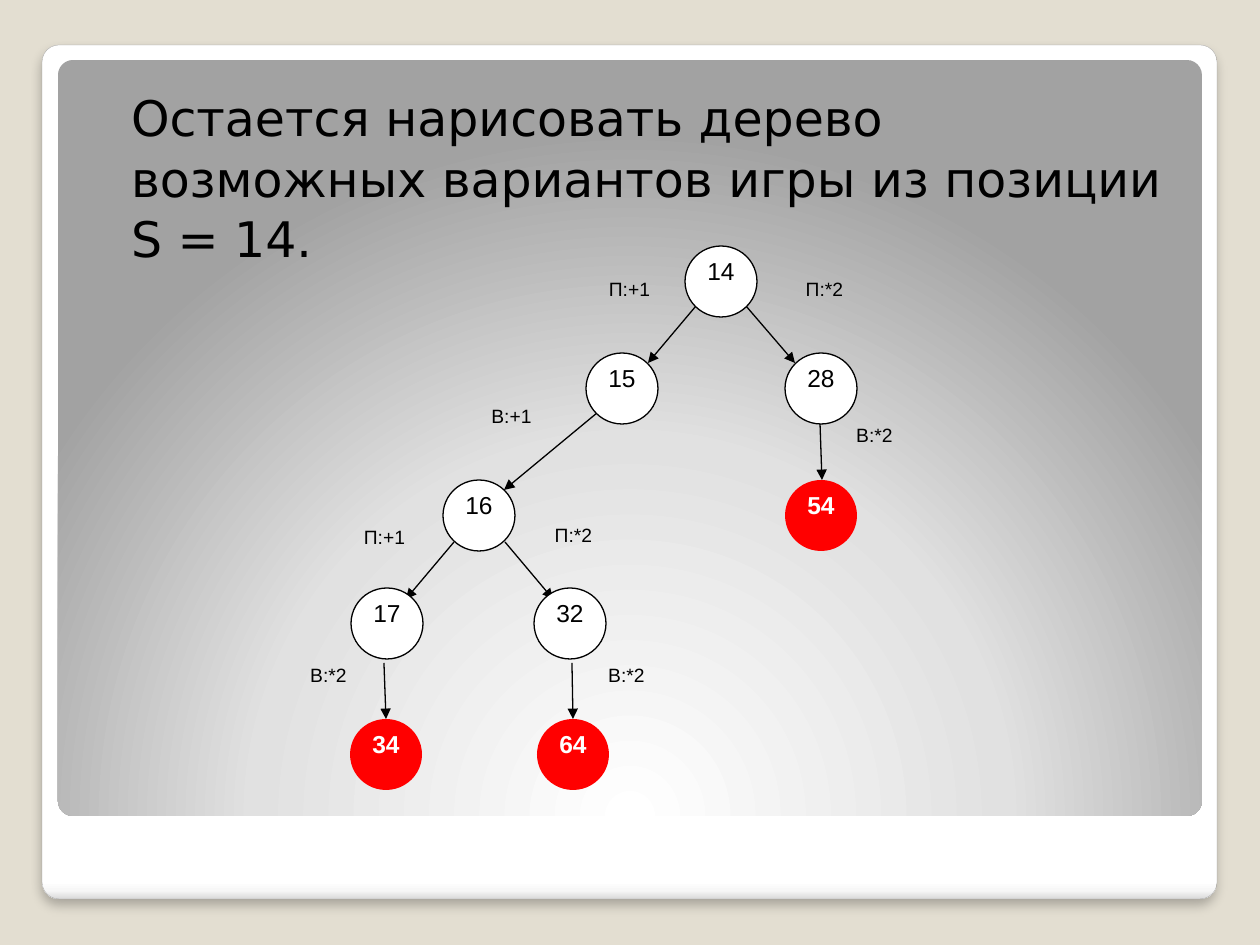
"""Build a slide with the game tree for the starting position S = 14."""
from lxml import etree
from pptx import Presentation
from pptx.dml.color import RGBColor
from pptx.enum.shapes import MSO_CONNECTOR, MSO_SHAPE
from pptx.enum.text import MSO_ANCHOR, PP_ALIGN
from pptx.oxml.ns import qn
from pptx.util import Pt

PX = 914400 / 126
ELLIPSE, ROUNDED = MSO_SHAPE.OVAL, MSO_SHAPE.ROUNDED_RECTANGLE
STRAIGHT = MSO_CONNECTOR.STRAIGHT
TOP, CENTER = MSO_ANCHOR.TOP, PP_ALIGN.CENTER
C = {
    "background": "E3DED1", "frame_line": "A4A4A4", "black": "000000",
    "white": "FFFFFF", "win": "FF0000", "edge_light": "F7F7F7",
    "edge_dark": "DADADA", "panel_mid": "E1E1E1", "panel_dark": "A2A2A2",
}
RGB = {name: RGBColor.from_string(value) for name, value in C.items()}


def add_shape(kind, *box):
    sp = s.shapes.add_shape(kind, *[round(v * PX) for v in box])
    sp.shadow.inherit = False
    sp.fill.background()
    sp.line.fill.background()
    return sp


def set_gradient(sp, stops):
    sp.fill.gradient()
    grad = sp._element.spPr.find(qn("a:gradFill"))
    for child in list(grad):
        grad.remove(child)
    gs_list = etree.SubElement(grad, qn("a:gsLst"))
    for pos, color in stops:
        gs = etree.SubElement(gs_list, qn("a:gs"), pos=str(pos * 1000))
        etree.SubElement(gs, qn("a:srgbClr"), val=C[color])
    return grad


prs = Presentation()
prs.slide_width, prs.slide_height = round(1260 * PX), round(945 * PX)
s = prs.slides.add_slide(prs.slide_layouts[6])
s.background.fill.solid()
s.background.fill.fore_color.rgb = RGB["background"]

frame = add_shape(ROUNDED, 42, 45, 1175, 854)
frame.adjustments[0] = 0.02
grad = set_gradient(frame, [(0, "white"), (98, "white"), (99, "edge_light"), (100, "edge_dark")])
etree.SubElement(grad, qn("a:lin"), ang="5400000", scaled="0")
frame.line.color.rgb = RGB["frame_line"]
frame.line.width = Pt(0.16)
effects = frame._element.spPr.find(qn("a:effectLst"))
shadow = etree.SubElement(effects, qn("a:outerShdw"), blurRad=str(Pt(6)),
                          dist=str(Pt(4)), dir="5400000", algn="t", rotWithShape="0")
shade = etree.SubElement(shadow, qn("a:srgbClr"), val=C["black"])
etree.SubElement(shade, qn("a:alpha"), val="25000")

panel = add_shape(ROUNDED, 58, 60, 1144, 756)
panel.adjustments[0] = 0.02
grad = set_gradient(panel, [(0, "white"), (55, "panel_mid"), (100, "panel_dark")])
radial = etree.SubElement(grad, qn("a:path"), path="circle")
etree.SubElement(radial, qn("a:fillToRect"), l="50000", t="175000", r="50000", b="-75000")

title = s.shapes.add_textbox(*[round(v * PX) for v in (69, 73, 1128, 747)])
tf = title.text_frame
tf.word_wrap = True
tf.margin_left, tf.margin_top = round(62 * PX), round(13 * PX)
tf.margin_right, tf.margin_bottom = round(13 * PX), round(6 * PX)
p = tf.paragraphs[0]
p.text = "Остается нарисовать дерево возможных вариантов игры из позиции S = 14."
p.space_before = Pt(2.5)
p.line_spacing = 1.03
p.font.size, p.font.name = Pt(28), "DejaVu Sans"
p.font.color.rgb = RGB["black"]

moves = [
    (746, 306, 795, 363), (696, 306, 648, 363), (597, 413, 504, 490),
    (820, 423, 822, 480), (505, 542, 553, 599), (454, 542, 406, 599),
    (384, 663, 386, 719), (572, 663, 573, 719),
]
for ends in moves:
    arrow = s.shapes.add_connector(STRAIGHT, *[round(v * PX) for v in ends])
    arrow.line.color.rgb = RGB["black"]
    arrow.line.width = Pt(0.75)
    etree.SubElement(arrow.line._get_or_add_ln(), qn("a:tailEnd"), type="triangle")
    etree.SubElement(arrow._element.spPr, qn("a:effectLst"))

ovals = [
    ("14", 685, 246, "node"), ("15", 586, 353, "node"), ("28", 785, 353, "node"),
    ("16", 443, 480, "node"), ("54", 785, 480, "win"),
    ("17", 351, 588, "node"), ("32", 534, 588, "node"),
    ("34", 350, 719, "win"), ("64", 537, 719, "win"),
    ("П:+1", 564, 267, "move"), ("П:*2", 759, 267, "move"),
    ("В:+1", 446, 394, "move"), ("В:*2", 809, 413, "move"),
    ("П:+1", 319, 515, "move"), ("П:*2", 508, 513, "move"),
    ("В:*2", 263, 653, "move"), ("В:*2", 561, 653, "move"),
]
for text, x, y, role in ovals:
    sp = add_shape(ELLIPSE, x, y, 131 if role == "move" else 72, 71)
    if role != "move":
        sp.fill.solid()
        sp.fill.fore_color.rgb = RGB["win" if role == "win" else "white"]
    if role == "node":
        sp.line.color.rgb = RGB["black"]
        sp.line.width = Pt(0.75)
    tf = sp.text_frame
    tf.margin_left = tf.margin_right = tf.margin_top = tf.margin_bottom = 0
    tf.vertical_anchor = TOP
    p = tf.paragraphs[0]
    p.text = text
    p.alignment = CENTER
    p.font.name, p.font.size = "Arial", Pt(11 if role == "move" else 14)
    p.font.bold = role == "win"
    p.font.color.rgb = RGB["white" if role == "win" else "black"]

prs.save("out.pptx")
